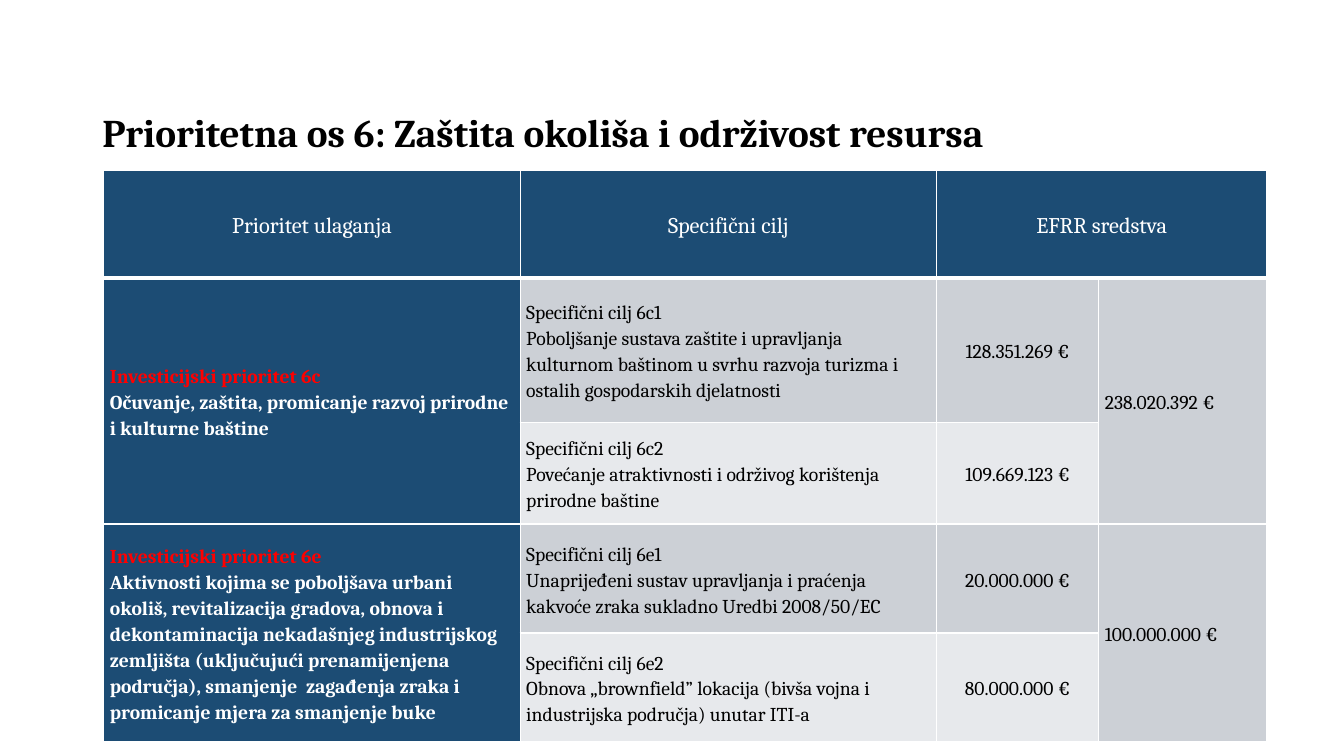
from lxml import etree
from pptx import Presentation
from pptx import util as u
from pptx.dml.color import RGBColor
from pptx.enum import text
from pptx.oxml.ns import qn

Pt = u.Pt
HUES = {"navy": "1C4C74", "mid": "CCD0D6", "pale": "E7E9EC",
        "white": "FFFFFF", "black": "000000", "red": "FF0000"}
LEFT, MID = text.PP_ALIGN.LEFT, text.PP_ALIGN.CENTER
COLS = [297.4, 297.4, 115.9, 120.2]
ROWS = [77, 103, 72.7, 77.8, 77.8]
HEADS = ["Prioritet ulaganja", "Specifični cilj", "EFRR sredstva"]
GROUPS = [
    ("Investicijski prioritet 6c",
     "Očuvanje, zaštita, promicanje razvoj prirodne i kulturne baštine",
     "238.020.392 €",
     [("Specifični cilj 6c1",
       "Poboljšanje sustava zaštite i upravljanja kulturnom baštinom u svrhu "
       "razvoja turizma i ostalih gospodarskih djelatnosti", "128.351.269 €"),
      ("Specifični cilj 6c2",
       "Povećanje atraktivnosti i održivog korištenja prirodne baštine",
       "109.669.123 €")]),
    ("Investicijski prioritet 6e",
     "Aktivnosti kojima se poboljšava urbani okoliš, revitalizacija gradova, "
     "obnova i dekontaminacija nekadašnjeg industrijskog zemljišta (uključujući "
     "prenamijenjena područja), smanjenje  zagađenja zraka i promicanje mjera "
     "za smanjenje buke",
     "100.000.000 €",
     [("Specifični cilj 6e1",
       "Unaprijeđeni sustav upravljanja i praćenja kakvoće zraka sukladno "
       "Uredbi 2008/50/EC", "20.000.000 €"),
      ("Specifični cilj 6e2",
       "Obnova „brownfield” lokacija (bivša vojna i industrijska područja) "
       "unutar ITI-a", "80.000.000 €")]),
]


def apply(obj, vals):
    """Set every attribute in vals on obj."""
    for key, val in vals.items():
        setattr(obj, key, val)


def write(frame, lines, size, bold=False, align=LEFT, space=1.15):
    """Write (words, hue) lines as paragraphs of a frame."""
    for i, (words, hue) in enumerate(lines):
        para = frame.paragraphs[0] if i == 0 else frame.add_paragraph()
        apply(para, {"alignment": align, "line_spacing": space})
        run = para.add_run()
        run.text = words
        apply(run.font, {"name": "Cambria", "size": Pt(size), "bold": bold})
        run.font.color.rgb = RGBColor.from_string(HUES[hue])


def edge(cell, side, width):
    """Draw one white border of a cell."""
    line = etree.SubElement(cell._tc.get_or_add_tcPr(), qn("a:ln" + side),
                            w=str(Pt(width)))
    fill = etree.SubElement(line, qn("a:solidFill"))
    etree.SubElement(fill, qn("a:srgbClr"), val=HUES["white"])


def paint(cell, hue, top=1, base=1, pad=4.3):
    """Give a cell its borders, fill and margins."""
    for side, width in zip("LRTB", (1, 1, top, base)):
        edge(cell, side, width)
    cell.fill.solid()
    cell.fill.fore_color.rgb = RGBColor.from_string(HUES[hue])
    apply(cell, {"margin_left": Pt(pad), "margin_right": Pt(pad),
                 "margin_top": Pt(0.7), "margin_bottom": 0,
                 "vertical_anchor": text.MSO_ANCHOR.MIDDLE})


def title(slide, x, y, w, h):
    """Place the slide title low in its box."""
    frame = slide.shapes.add_textbox(Pt(x), Pt(y), Pt(w), Pt(h)).text_frame
    apply(frame, {"word_wrap": True, "margin_bottom": Pt(22),
                  "vertical_anchor": text.MSO_ANCHOR.BOTTOM})
    write(frame, [("Prioritetna os 6: Zaštita okoliša i održivost resursa",
                   "black")], 28, bold=True, space=0.9)


def grid(slide, x, y):
    """Build the table of priorities, goals and funds."""
    table = slide.shapes.add_table(len(ROWS), len(COLS), Pt(x), Pt(y),
                                   Pt(sum(COLS)), Pt(sum(ROWS))).table
    apply(table, {"first_row": False, "horz_banding": False})
    for col, width in zip(table.columns, COLS):
        col.width = Pt(width)
    for row, high in zip(table.rows, ROWS):
        row.height = Pt(high)

    for c in range(len(COLS)):
        paint(table.cell(0, c), "navy", base=3, pad=3.6)
    table.cell(0, 2).merge(table.cell(0, 3))
    for c, head in enumerate(HEADS):
        write(table.cell(0, c).text_frame, [(head, "white")], 16, align=MID)

    for g, (name, about, total, goals) in enumerate(GROUPS):
        first = 1 + 2 * g
        for i, (goal, aim, fund) in enumerate(goals):
            r = first + i
            band = ("mid", "pale")[i]
            for c, hue in enumerate(("navy", band, band, "mid")):
                paint(table.cell(r, c), hue, top=3 if r == 1 else 1)
            write(table.cell(r, 1).text_frame,
                  [(goal, "black"), (aim, "black")], 14)
            write(table.cell(r, 2).text_frame, [(fund, "black")], 14, align=MID)
        for c in (0, 3):
            table.cell(first, c).merge(table.cell(first + 1, c))
        write(table.cell(first, 0).text_frame,
              [(name, "red"), (about, "white")], 14, bold=True)
        write(table.cell(first, 3).text_frame, [(total, "black")], 14)


def main():
    """Build and save the slide."""
    deck = Presentation()
    apply(deck, {"slide_width": Pt(960), "slide_height": Pt(540)})
    slide = deck.slides.add_slide(deck.slide_layouts[6])
    title(slide, 66, 28.8, 828, 104.4)
    grid(slide, 74.2, 121.7)
    deck.save("out.pptx")


if __name__ == "__main__":
    main()
